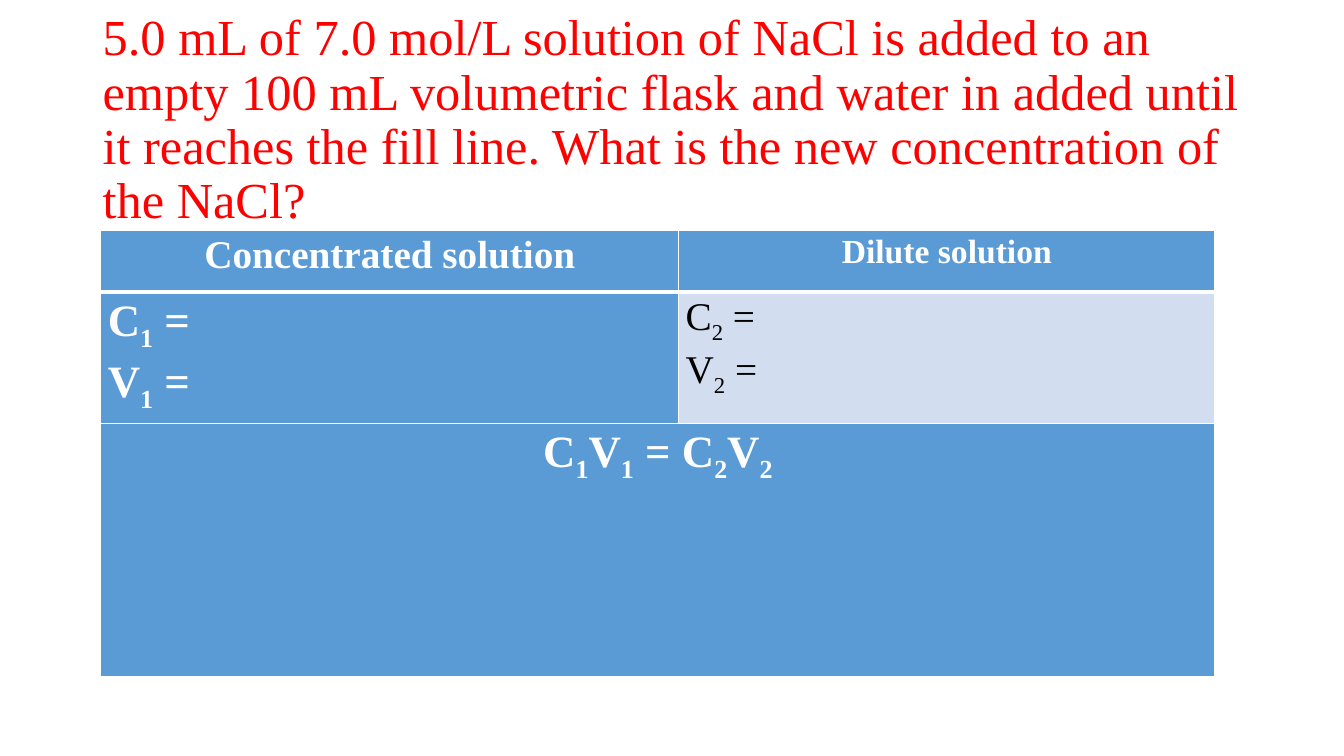
from dataclasses import dataclass

from lxml.etree import SubElement
from pptx import Presentation
from pptx.dml.color import RGBColor
from pptx.enum.text import MSO_ANCHOR, PP_ALIGN
from pptx.oxml.ns import qn
from pptx.table import _Cell
from pptx.text.text import TextFrame
from pptx.util import Emu, Inches, Pt

COLOURS = {
    "question": "FF0000",
    "header": "5B9BD5",
    "band": "D2DEEF",
    "light": "FFFFFF",
    "dark": "000000",
}
FONT = "Times New Roman"
WIDTH, HEIGHT = Inches(13.33), Inches(7.5)

# Table grid, in percent of the slide's width and height
TABLE_LEFT, TABLE_TOP = 7.5, 30.53
COLUMNS = (43, 39.9)
ROWS = (8.13, 16.53, 33.47)

QUESTION = (
    "5.0 mL of 7.0 mol/L solution of NaCl is added to an empty 100 mL "
    "volumetric flask and water in added until it reaches the fill line. "
    "What is the new concentration of the NaCl?"
)


@dataclass
class CellContent:
    row: int
    column: int
    lines: tuple[str, ...]
    size: int
    align: PP_ALIGN = PP_ALIGN.CENTER
    fill: str = "header"
    colour: str = "light"
    bold: bool = True


# An underscore puts the next character in subscript
CELLS = (
    CellContent(0, 0, ("Concentrated solution",), 28),
    CellContent(0, 1, ("Dilute solution",), 24),
    CellContent(1, 0, ("C_1 =", "V_1 ="), 32, PP_ALIGN.LEFT),
    CellContent(1, 1, ("C_2 =", "V_2 ="), 28, PP_ALIGN.LEFT, "band", "dark", False),
    CellContent(2, 0, ("C_1V_1 = C_2V_2",), 32),
)


def across(percent: float) -> Emu:
    return Emu(round(WIDTH * percent / 100))


def down(percent: float) -> Emu:
    return Emu(round(HEIGHT * percent / 100))


def write(frame: TextFrame, lines: tuple[str, ...], *, size: int, colour: str,
          bold: bool = False, align: PP_ALIGN = PP_ALIGN.LEFT,
          spacing: float = 1.07) -> None:
    """Fill a text frame, one paragraph per line."""
    for number, line in enumerate(lines):
        para = frame.add_paragraph() if number else frame.paragraphs[0]
        para.alignment, para.line_spacing = align, spacing
        first, *rest = line.split("_")
        pieces = [(first, False)]
        for part in rest:
            pieces += [(part[0], True), (part[1:], False)]
        for text, subscript in pieces:
            if not text:
                continue
            span = para.add_run()
            span.text = text
            span.font.name, span.font.size, span.font.bold = FONT, Pt(size), bold
            span.font.color.rgb = RGBColor.from_string(COLOURS[colour])
            if subscript:
                span.font._element.set("baseline", "-25000")


def draw_borders(cell: _Cell, row: int) -> None:
    """White rules, thicker between the header and the body."""
    widths = {"L": 1, "R": 1, "T": 3 if row == 1 else 1, "B": 3 if row == 0 else 1}
    properties = cell._tc.get_or_add_tcPr()
    for side, points in widths.items():
        line = SubElement(properties, qn(f"a:ln{side}"), w=str(Pt(points)))
        fill = SubElement(line, qn("a:solidFill"))
        SubElement(fill, qn("a:srgbClr"), val=COLOURS["light"])


deck = Presentation()
deck.slide_width, deck.slide_height = WIDTH, HEIGHT
page = deck.slides.add_slide(deck.slide_layouts[6])

# Question
box = page.shapes.add_textbox(across(6.9), down(5.33), across(86.27), down(21.33))
box.text_frame.word_wrap = True
box.text_frame.vertical_anchor = MSO_ANCHOR.MIDDLE
write(box.text_frame, (QUESTION,), size=36, colour="question", spacing=0.9)

# Table grid
table = page.shapes.add_table(
    len(ROWS), len(COLUMNS), across(TABLE_LEFT), down(TABLE_TOP),
    across(sum(COLUMNS)), down(sum(ROWS)),
).table
for column, share in zip(table.columns, COLUMNS):
    column.width = across(share)
for row, share in zip(table.rows, ROWS):
    row.height = down(share)
table.cell(2, 0).merge(table.cell(2, 1))

# Table content
for content in CELLS:
    cell = table.cell(content.row, content.column)
    cell.margin_left = cell.margin_right = Inches(0.07)
    cell.margin_top = cell.margin_bottom = 0
    draw_borders(cell, content.row)
    cell.fill.solid()
    cell.fill.fore_color.rgb = RGBColor.from_string(COLOURS[content.fill])
    write(cell.text_frame, content.lines, size=content.size, colour=content.colour,
          bold=content.bold, align=content.align)

deck.save("out.pptx")
